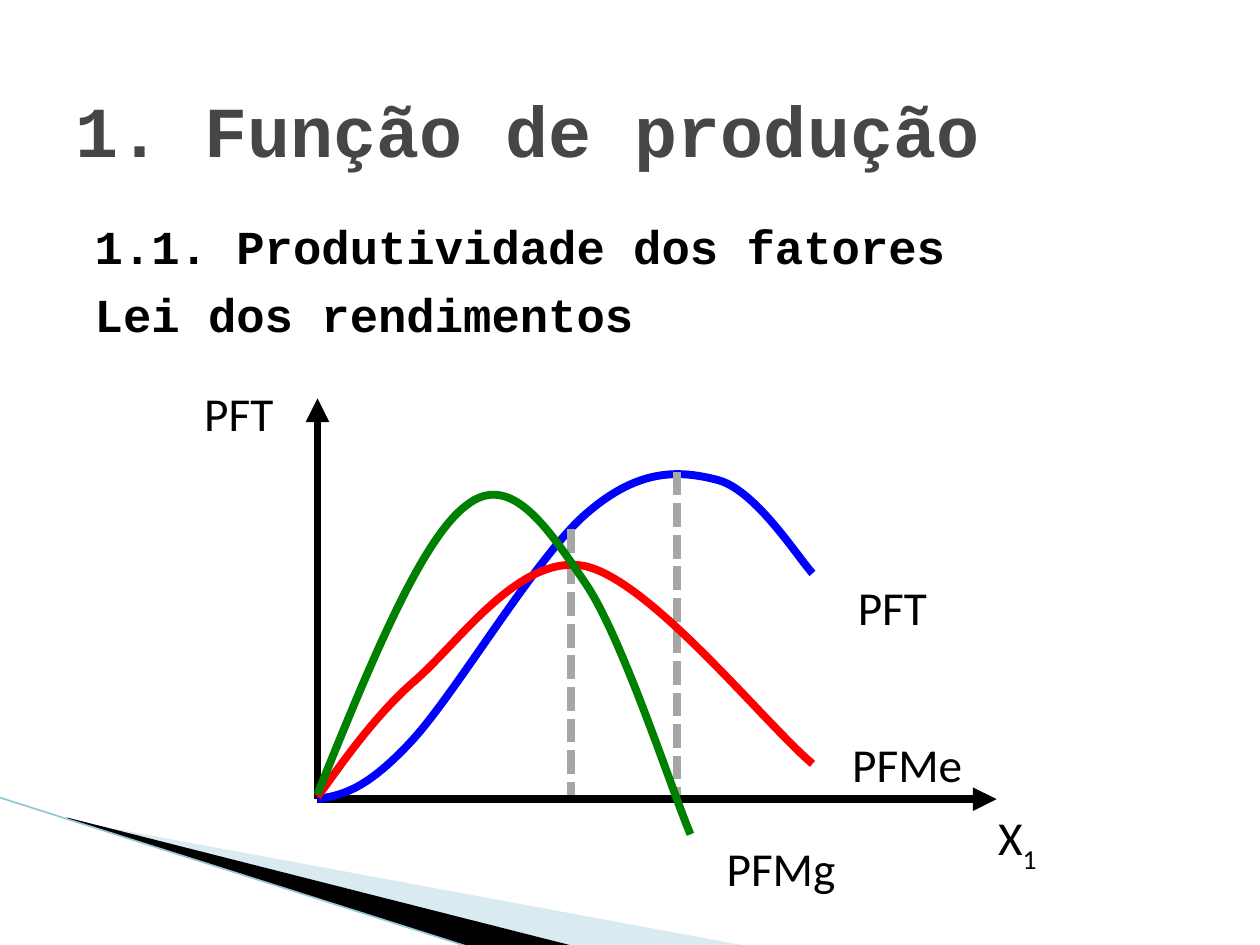
from dataclasses import dataclass
from lxml import etree
from pptx import Presentation, util as u
from pptx.dml.color import RGBColor
from pptx.enum import dml, text
from pptx.enum.shapes import MSO_CONNECTOR
from pptx.oxml.ns import qn


@dataclass(frozen=True)
class Theme:
    ink: str = "000000"
    title: str = "464646"
    pale: str = "A0CBDC"
    edge: str = "97C5D8"
    guide: str = "A6A6A6"
    total: str = "0000FF"
    average: str = "FF0000"
    marginal: str = "008000"
    heading_font: str = "Courier New"
    label_font: str = "Calibri"
    title_size: int = 41
    text_size: int = 27
    stroke: float = 4.5
    hairline: float = 0.95


T = Theme()


def rgb(color):
    return RGBColor.from_string(color)


def add_run(p, wording, font, size, color, bold=False):
    r = p.add_run()
    r.text = wording
    r.font.name, r.font.size, r.font.bold = font, u.Pt(size), bold
    r.font.color.rgb = rgb(color)
    return r


def add_box(shapes, left, top, width, height):
    s = shapes.add_textbox(u.Cm(left), u.Cm(top), u.Cm(width), u.Cm(height))
    s.text_frame.word_wrap = True
    return s.text_frame


def add_line(shapes, start, end, color, width):
    s = shapes.add_connector(MSO_CONNECTOR.STRAIGHT, *map(u.Cm, start + end))
    s.line.color.rgb = rgb(color)
    s.line.width = u.Pt(width)
    etree.SubElement(s._element.spPr, qn("a:effectLst"))
    return s


def add_outline(shapes, points, close):
    (x, y), *rest = [(u.Cm(px), u.Cm(py)) for px, py in points]
    builder = shapes.build_freeform(x, y)
    builder.add_line_segments(rest, close=close)
    s = builder.convert_to_shape()
    s.shadow.inherit = False
    return s


def add_wedge(shapes, points, color, alpha=100):
    s = add_outline(shapes, points, True)
    s.fill.solid()
    s.fill.fore_color.rgb = rgb(color)
    s.line.fill.background()
    if alpha < 100:
        clr = s._element.spPr.find(".//" + qn("a:srgbClr"))
        etree.SubElement(clr, qn("a:alpha")).set("val", str(alpha * 1000))


def add_curve(shapes, points, color):
    s = add_outline(shapes, points, False)
    s.fill.background()
    s.line.color.rgb = rgb(color)
    s.line.width = u.Pt(T.stroke)
    path = s._element.spPr.find(".//" + qn("a:path"))
    segments = path.findall(qn("a:lnTo"))
    for i in range(0, len(segments), 3):
        bezier = etree.SubElement(path, qn("a:cubicBezTo"))
        for segment in segments[i:i + 3]:
            bezier.append(segment[0])
            path.remove(segment)


def swoosh(slide, left, top):
    def at(*points):
        return [(left + x, top + y) for x, y in points]

    add_wedge(slide.shapes, at((1.4, 0.46), (15.11, 3), (11.58, 3), (1.4, 0.43)), T.pale, 40)
    add_wedge(slide.shapes, at((1.35, 0.4), (11.6, 3), (9.45, 3), (1.37, 0.43)), T.ink)
    add_line(slide.shapes, (left, top), (left + 9.42, top + 3), T.edge, T.hairline)


def title(slide, left, top, width, height):
    tf = add_box(slide.shapes, left, top, width, height)
    tf.vertical_anchor = text.MSO_ANCHOR.MIDDLE
    tf.margin_top = u.Cm(0.6)
    add_run(tf.paragraphs[0], "1. Função de produção", T.heading_font,
            T.title_size, T.title, True)


def body(slide, left, top, width, height):
    tf = add_box(slide.shapes, left, top, width, height)
    tf.margin_top = u.Cm(0.28)
    tf.margin_left = u.Cm(0.64)
    for i, wording in enumerate(("1.1. Produtividade dos fatores", "Lei dos rendimentos")):
        p = tf.add_paragraph() if i else tf.paragraphs[0]
        p.space_before = u.Pt(6 if i else 0)
        add_run(p, wording, T.heading_font, T.text_size, T.ink, True)


def plot(slide, left, top, width, height):
    shapes = slide.shapes.add_group_shape().shapes

    def at(x, y):
        return left + x, top + height - y

    for end in ((0, height), (width, 0)):
        axis = add_line(shapes, at(0, 0), at(*end), T.ink, T.stroke)
        etree.SubElement(axis.line._get_or_add_ln(), qn("a:tailEnd")).set("type", "triangle")

    def curve(points, color):
        add_curve(shapes, [at(*point) for point in points], color)

    curve([(0, 0), (0.46, 0.08), (0.94, 0.15), (1.85, 1.12),
           (2.77, 2.08), (4.42, 4.93), (5.46, 5.79),
           (6.5, 6.68), (7.32, 6.63), (8.08, 6.43),
           (8.84, 6.22), (9.68, 4.88), (9.98, 4.55)], T.total)
    for x, peak in ((7.24, 6.6), (5.11, 5.44)):
        guide = add_line(shapes, at(x, peak), at(x, 0.09), T.guide, T.stroke)
        guide.line.dash_style = dml.MSO_LINE.SQUARE_DOT
    curve([(0, 0.05), (0.3, 0.43), (1.02, 1.55), (1.91, 2.34),
           (2.82, 3.1), (4.04, 4.95), (5.38, 4.7),
           (6.71, 4.42), (9.02, 1.52), (9.98, 0.71)], T.average)
    curve([(0, 0.1), (1.04, 2.67), (2.08, 5.23), (3, 5.92),
           (3.89, 6.63), (4.65, 5.46), (5.41, 4.34),
           (6.15, 3.25), (7.16, 0.13), (7.52, -0.71)], T.marginal)

    for wording, subscript, x, y, w, h in (
        ("PFMe", "", 10.06, 1.4, 3.66, 1.35),
        ("PFMg", "", 7.49, -0.71, 3.71, 1.35),
        ("X", "1", 12.6, -0.18, 3.02, 1.35),
        ("PFT", "", -3.02, 8.71, 2.87, 1.83),
        ("PFT", "", 10.08, 4.8, 3.02, 1.85),
    ):
        tf = add_box(shapes, *at(x, y), w, h)
        tf.vertical_anchor = text.MSO_ANCHOR.MIDDLE
        p = tf.paragraphs[0]
        p.alignment = text.PP_ALIGN.CENTER
        add_run(p, wording, T.label_font, T.text_size, T.ink)
        if subscript:
            r = add_run(p, subscript, T.label_font, T.text_size, T.ink)
            r.font._element.set("baseline", "-30000")


def main():
    prs = Presentation()
    prs.slide_width, prs.slide_height = u.Cm(25.4), u.Cm(19.05)
    slide = prs.slides.add_slide(prs.slide_layouts[6])
    swoosh(slide, 0, 16.08)
    body(slide, 1.27, 4.11, 22.86, 3.1)
    title(slide, 1.27, 0.76, 22.86, 3.18)
    plot(slide, 6.4, 8.03, 13.69, 8.08)
    prs.save("out.pptx")


if __name__ == "__main__":
    main()
